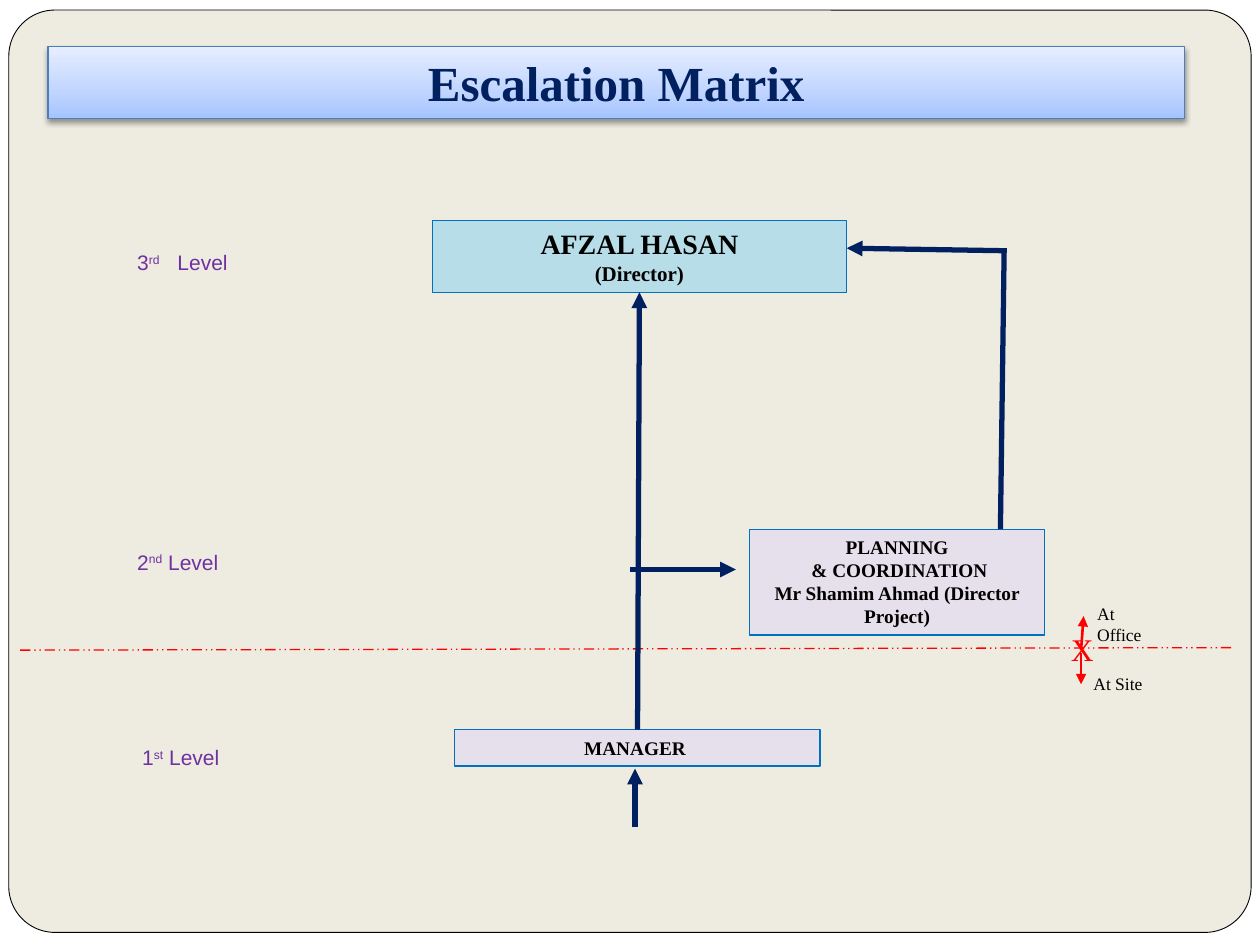
from dataclasses import dataclass
from typing import Optional

from lxml.etree import SubElement
from pptx import Presentation
from pptx.dml.color import RGBColor
from pptx.enum.dml import MSO_LINE
from pptx.enum.shapes import MSO_CONNECTOR, MSO_SHAPE
from pptx.enum.text import MSO_ANCHOR, PP_ALIGN
from pptx.oxml.ns import qn
from pptx.util import Inches, Pt

NAVY = RGBColor(0x00, 0x20, 0x60)
BLUE = RGBColor(0x00, 0x70, 0xC0)
TITLE_EDGE = RGBColor(0x4B, 0x7E, 0xBC)
AQUA = RGBColor(0xB7, 0xDE, 0xE8)
LILAC = RGBColor(0xE6, 0xE0, 0xEC)
CREAM = RGBColor(0xEE, 0xEC, 0xE1)
PURPLE = RGBColor(0x70, 0x30, 0xA0)
RED = RGBColor(0xFF, 0x00, 0x00)
BLACK = RGBColor(0, 0, 0)
WHITE = RGBColor(0xFF, 0xFF, 0xFF)
SERIF, SANS = "Times New Roman", "Arial"
BOTTOM, TOP = 2, 0
TITLE_STOPS = ((0, "A4C4FF"), (35000, "BFD4FF"), (100000, "E6EEFF"))


@dataclass
class Box:
    at: tuple
    fill: RGBColor
    lines: tuple = ()  # (text, size) pairs
    edge: Optional[RGBColor] = BLUE
    color: RGBColor = BLACK
    width: float = 0.75
    kind: MSO_SHAPE = MSO_SHAPE.RECTANGLE


@dataclass
class Line:
    start: tuple
    end: tuple
    color: RGBColor = NAVY
    width: float = 3
    arrow: bool = True


@dataclass
class Note:
    at: tuple
    text: str
    size: float = 10
    color: RGBColor = BLACK


@dataclass
class Level:
    at: tuple
    number: str
    suffix: str
    rest: str = " Level"


PAGE = Box((0, 0, 10, 7.5), WHITE, edge=None)
FRAME = Box((0.07, 0.08, 9.86, 7.32), CREAM, edge=BLACK, width=0.5,
            kind=MSO_SHAPE.ROUNDED_RECTANGLE)
TITLE = Box((0.38, 0.37, 9.02, 0.57), AQUA, (("Escalation Matrix", 28),),
            edge=TITLE_EDGE, color=NAVY)
DIRECTOR = Box((3.43, 1.75, 3.29, 0.57), AQUA, (("AFZAL HASAN", 16), ("(Director)", 12)))
MANAGER = Box((3.61, 5.79, 2.9, 0.29), LILAC, (("MANAGER ", 11),))
PLANNING = Box((5.95, 4.2, 2.34, 0.84), LILAC, (
    ("PLANNING", 11), (" & COORDINATION", 11), ("Mr Shamim Ahmad (Director Project)", 11)))

ESCALATION = Line((5.06, 5.79), (5.08, 2.32))
SITE_BORDER = Line((0.16, 5.16), (9.79, 5.14), RED, 0.75, arrow=False)
LINES = (
    Line((7.97, 1.97), (7.94, 4.2), arrow=False),
    Line((5, 4.52), (5.84, 4.52)),
    Line((7.97, 1.99), (6.72, 1.97)),
    Line((5.04, 6.56), (5.04, 6.1)),
    Line((8.58, 5.18), (8.58, 5.43), RED, 1.5),
    Line((8.58, 5.16), (8.6, 4.89), RED, 1.5),
)
NOTES = (
    Note((8.58, 5.29, 0.61, 0.27), "At Site"),
    Note((8.61, 4.74, 0.71, 0.27), "At Office"),
    Note((8.4, 4.95, 0.44, 0.4), "X", 18, RED),
)
LEVELS = (
    Level((0.99, 1.93, 0.95, 0.3), "3", "rd", "\tLevel"),
    Level((0.99, 4.31, 0.95, 0.3), "2", "nd"),
    Level((1.03, 5.86, 0.95, 0.3), "1", "st"),
)


def inches(values: tuple) -> list:
    return [Inches(v) for v in values]


def add_run(p, text: str, size: float, color: RGBColor, name: str = SERIF, bold: bool = False):
    r = p.add_run()
    r.text = text
    for key, value in {"size": Pt(size), "name": name, "bold": bold}.items():
        setattr(r.font, key, value)
    r.font.color.rgb = color
    return r


def add_box(s, box: Box):
    sp = s.shapes.add_shape(box.kind, *inches(box.at))
    sp.shadow.inherit = False
    sp.fill.solid()
    sp.fill.fore_color.rgb = box.fill
    if box.edge is None:
        sp.line.fill.background()
    else:
        sp.line.color.rgb = box.edge
        sp.line.width = Pt(box.width)
    tf = sp.text_frame
    tf.word_wrap = True
    tf.vertical_anchor = MSO_ANCHOR.TOP
    for i, (text, size) in enumerate(box.lines):
        p = tf.add_paragraph() if i else tf.paragraphs[0]
        p.alignment = PP_ALIGN.CENTER
        add_run(p, text, size, box.color, bold=True)
    return sp


def style_title(sp) -> None:
    """Give the title bar its upward gradient and soft shadow."""
    sp.fill.gradient()
    grad = sp._element.spPr.find(qn("a:gradFill"))
    for child in list(grad):
        grad.remove(child)
    stops = SubElement(grad, qn("a:gsLst"))
    for pos, color in TITLE_STOPS:
        gs = SubElement(stops, qn("a:gs"), pos=str(pos))
        SubElement(gs, qn("a:srgbClr"), val=color)
    SubElement(grad, qn("a:lin"), ang="16200000", scaled="0")
    effects = sp._element.spPr.find(qn("a:effectLst"))
    shadow = SubElement(effects, qn("a:outerShdw"), blurRad=str(Pt(3.1)), dist=str(Pt(1.6)),
                        dir="5400000", rotWithShape="0")
    color = SubElement(shadow, qn("a:srgbClr"), val="000000")
    SubElement(color, qn("a:alpha"), val="38000")


def add_line(s, line: Line):
    c = s.shapes.add_connector(MSO_CONNECTOR.STRAIGHT, *inches(line.start + line.end))
    c.line.color.rgb = line.color
    c.line.width = Pt(line.width)
    if line.arrow:
        SubElement(c.line._get_or_add_ln(), qn("a:tailEnd"), type="triangle")
    SubElement(c._element.spPr, qn("a:effectLst"))
    return c


def add_text_box(s, at: tuple):
    tf = s.shapes.add_textbox(*inches(at)).text_frame
    tf.word_wrap = True
    return tf.paragraphs[0]


def add_level(s, level: Level) -> None:
    p = add_text_box(s, level.at)
    if "\t" in level.rest:
        tabs = SubElement(p._p.get_or_add_pPr(), qn("a:tabLst"))
        SubElement(tabs, qn("a:tab"), pos=str(Inches(0.32)), algn="l")
    add_run(p, level.number, 12, PURPLE, SANS)
    r = add_run(p, level.suffix, 12, PURPLE, SANS)
    r.font._element.set("baseline", "30000")
    add_run(p, level.rest, 12, PURPLE, SANS)


def main() -> None:
    prs = Presentation()
    prs.slide_width, prs.slide_height = Inches(10), Inches(7.5)
    s = prs.slides.add_slide(prs.slide_layouts[6])
    s.background.fill.solid()
    s.background.fill.fore_color.rgb = CREAM

    add_box(s, PAGE)
    add_box(s, FRAME).adjustments[0] = 0.05
    style_title(add_box(s, TITLE))
    director, manager = add_box(s, DIRECTOR), add_box(s, MANAGER)
    add_line(s, SITE_BORDER).line.dash_style = MSO_LINE.DASH_DOT_DOT
    add_box(s, PLANNING)
    escalation = add_line(s, ESCALATION)
    escalation.begin_connect(manager, TOP)
    escalation.end_connect(director, BOTTOM)
    for line in LINES:
        add_line(s, line)
    for note in NOTES:
        add_run(add_text_box(s, note.at), note.text, note.size, note.color)
    for level in LEVELS:
        add_level(s, level)
    prs.save("out.pptx")


if __name__ == "__main__":
    main()
